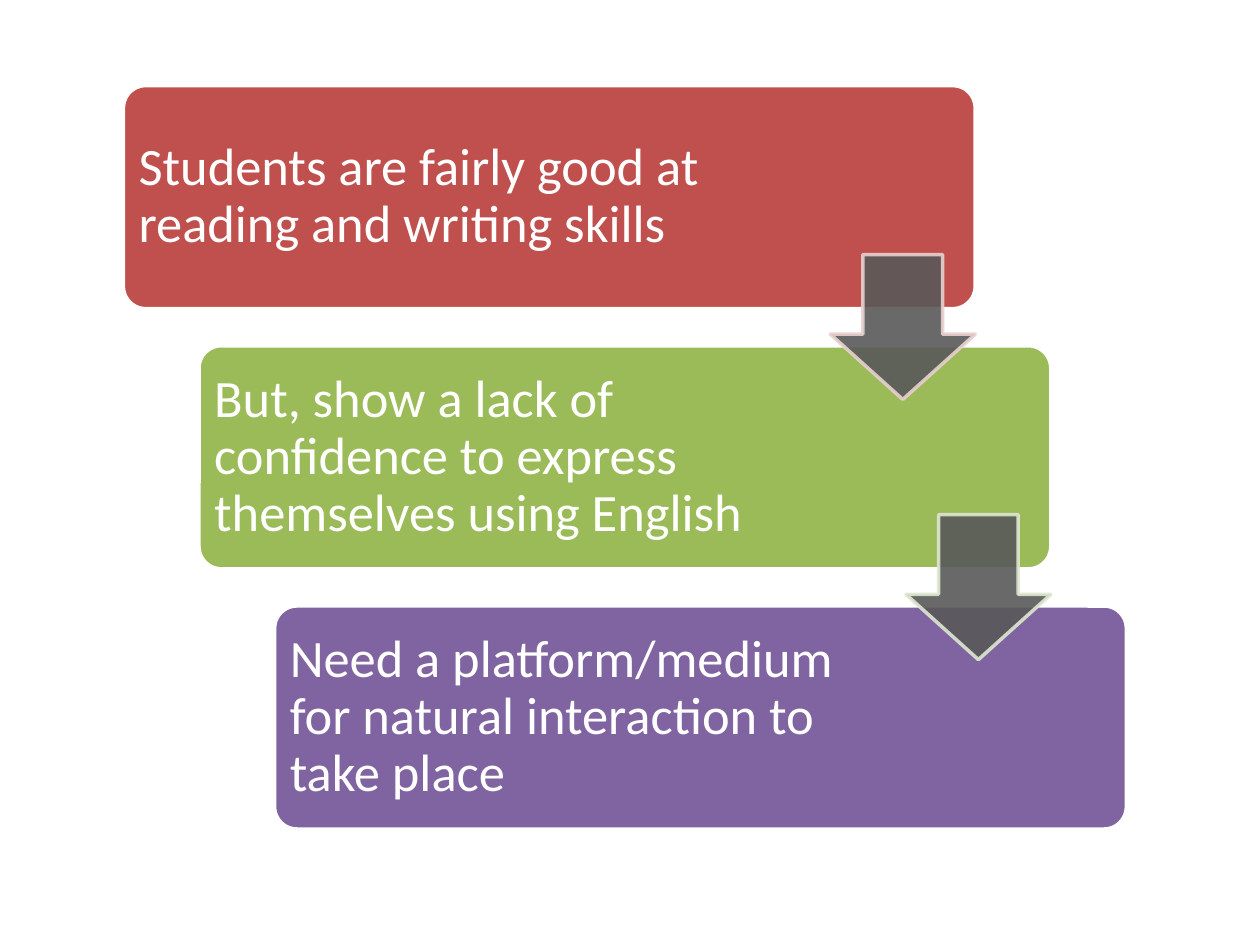
from lxml import etree
from pptx import Presentation
from pptx.dml.color import RGBColor
from pptx.enum.shapes import MSO_SHAPE as SHAPE
from pptx.enum.text import MSO_ANCHOR as ANCHOR
from pptx.oxml.ns import qn
from pptx.util import Inches, Pt

STEPS = [
    ("Students are fairly good at reading and writing skills", "C0504D", 4.95),
    ("But, show a lack of confidence to express themselves using English", "9BBB59", 5.01),
    ("Need a platform/medium for natural interaction to take place", "8064A2", 5.01),
]
ARROW_LINES = ["E8D0D0", "DEE7D1"]
LEFT, TOP, WIDTH, HEIGHT = 0.98, 0.68, 6.76, 1.77
STEP_X, STEP_Y = 0.6, 2.065
ARROW_LEFT, ARROW_TOP, ARROW_SIZE = 6.59, 2.02, 1.15

prs = Presentation()
prs.slide_width, prs.slide_height = Inches(10), Inches(7.5)
s = prs.slides.add_slide(prs.slide_layouts[6])


def add_shape(kind, x, y, w, h, fill, line, adj, alpha=100):
    """Add a preset shape with a fill, a 2 pt outline and a shared opacity."""
    sp = s.shapes.add_shape(kind, Inches(x), Inches(y), Inches(w), Inches(h))
    sp.shadow.inherit = False
    for i, value in enumerate(adj):
        sp.adjustments[i] = value
    sp.fill.solid()
    sp.fill.fore_color.rgb = RGBColor.from_string(fill)
    sp.line.color.rgb = RGBColor.from_string(line)
    sp.line.width = Pt(2)
    if alpha < 100:
        for clr in sp._element.spPr.iter(qn("a:srgbClr")):
            etree.SubElement(clr, qn("a:alpha")).set("val", str(alpha * 1000))


def add_text(text, x, y, w, h, size=30, font="Calibri", color="FFFFFF", inset=0.12):
    """Add a wrapped, vertically centred text box."""
    tf = s.shapes.add_textbox(Inches(x), Inches(y), Inches(w), Inches(h)).text_frame
    tf.word_wrap = True
    tf.vertical_anchor = ANCHOR.MIDDLE
    tf.margin_left = tf.margin_right = Inches(inset)
    tf.margin_top = tf.margin_bottom = Inches(inset)
    p = tf.paragraphs[0]
    p.line_spacing = 0.9
    r = p.add_run()
    r.text = text
    r.font.size, r.font.name = Pt(size), font
    r.font.color.rgb = RGBColor.from_string(color)


for i, (text, fill, text_width) in enumerate(STEPS):
    x, y = LEFT + i * STEP_X, TOP + i * STEP_Y
    add_shape(SHAPE.ROUNDED_RECTANGLE, x, y, WIDTH, HEIGHT, fill, "FFFFFF", [0.1])
    add_text(text, x, y, text_width, HEIGHT)

for i, line in enumerate(ARROW_LINES):
    add_shape(SHAPE.DOWN_ARROW, ARROW_LEFT + i * STEP_X, ARROW_TOP + i * STEP_Y,
              ARROW_SIZE, ARROW_SIZE, "595959", line, [0.55, 0.45], alpha=90)

prs.save("out.pptx")
